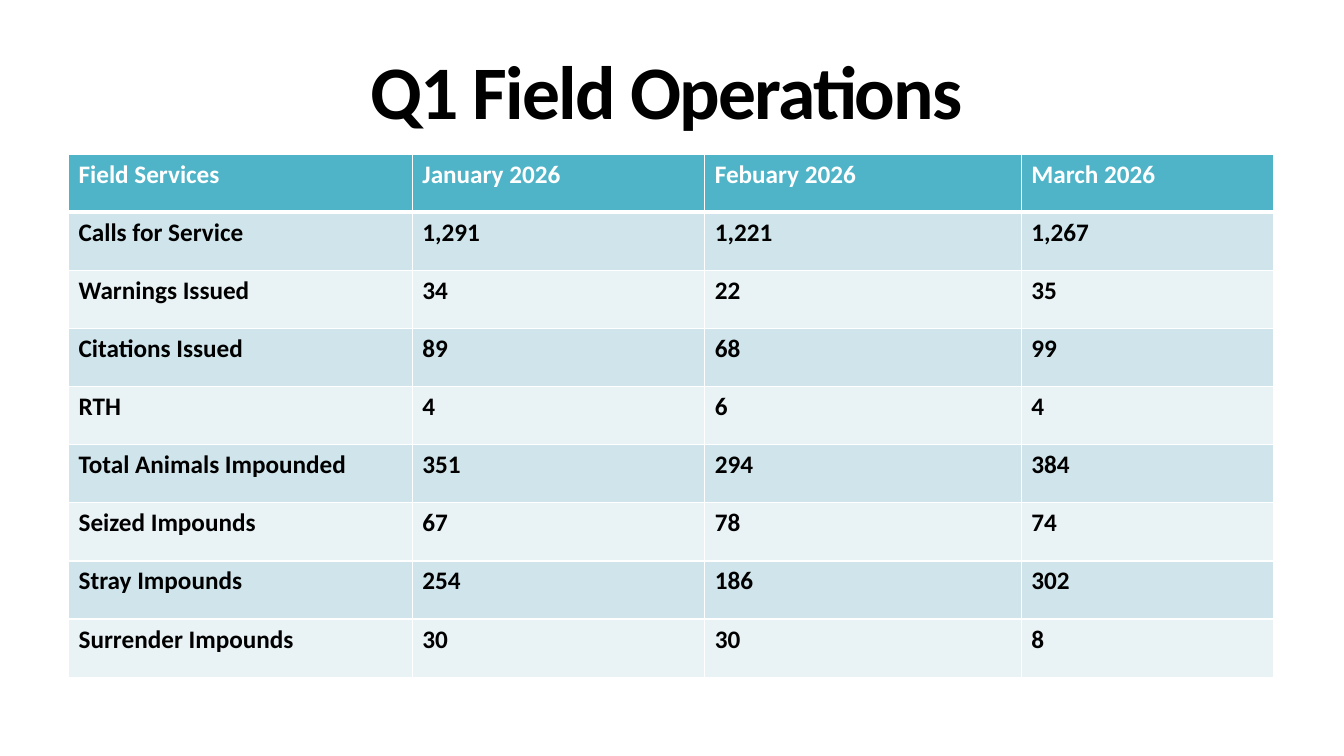
"""Build the Q1 Field Operations slide with its monthly table."""
from lxml import etree
from pptx import Presentation
from pptx.dml.color import RGBColor
from pptx.enum import text
from pptx.oxml import ns
from pptx.util import Inches, Pt

BLACK = RGBColor(0, 0, 0)
WHITE = RGBColor(255, 255, 255)
TEAL = RGBColor(0x50, 0xB4, 0xC8)
MIST = RGBColor(0xD0, 0xE5, 0xEB)
PALE = RGBColor(0xE9, 0xF2, 0xF5)

ROWS = [
    ("Field Services", "January 2026", "Febuary 2026", "March 2026"),
    ("Calls for Service", "1,291", "1,221", "1,267"),
    ("Warnings Issued", "34", "22", "35"),
    ("Citations Issued", "89", "68", "99"),
    ("RTH", "4", "6", "4"),
    ("Total Animals Impounded", "351", "294", "384"),
    ("Seized Impounds", "67", "78", "74"),
    ("Stray Impounds", "254", "186", "302"),
    ("Surrender Impounds", "30", "30", "8"),
]
WIDTHS = [3.41, 2.9, 3.14, 2.5]
HEIGHT = 5.19


def write(para, words, size, color):
    run = para.add_run()
    run.text = words
    run.font.name = "Calibri"
    run.font.size = Pt(size)
    run.font.bold = True
    run.font.color.rgb = color
    return run


def edge(cell, side, points):
    line = etree.SubElement(cell._tc.get_or_add_tcPr(), ns.qn("a:ln" + side), w=str(Pt(points)))
    fill = etree.SubElement(line, ns.qn("a:solidFill"))
    etree.SubElement(fill, ns.qn("a:srgbClr"), val=str(WHITE))


deck = Presentation()
deck.slide_width = Inches(13.33)
deck.slide_height = Inches(7.5)
slide = deck.slides.add_slide(deck.slide_layouts[6])

title = slide.shapes.add_textbox(Inches(0.72), Inches(0), Inches(11.78), Inches(1.91))
frame = title.text_frame
frame.word_wrap = True
frame.vertical_anchor = text.MSO_ANCHOR.MIDDLE
para = frame.paragraphs[0]
para.alignment = text.PP_ALIGN.CENTER
para.line_spacing = 0.85
head = write(para, "Q1 Field Operations", 54, BLACK)
head.font._element.set("spc", "-120")

table = slide.shapes.add_table(
    len(ROWS), len(WIDTHS), Inches(0.68), Inches(1.53), Inches(sum(WIDTHS)), Inches(HEIGHT)
).table
for col, width in zip(table.columns, WIDTHS):
    col.width = Inches(width)

for r, row in enumerate(ROWS):
    table.rows[r].height = Inches(HEIGHT / len(ROWS))
    shade = TEAL if r == 0 else MIST if r % 2 else PALE
    for c, words in enumerate(row):
        cell = table.cell(r, c)
        edge(cell, "L", 1)
        edge(cell, "R", 1)
        edge(cell, "T", 3 if r == 1 else 1)
        edge(cell, "B", 3 if r == 0 else 1)
        cell.fill.solid()
        cell.fill.fore_color.rgb = shade
        write(cell.text_frame.paragraphs[0], words, 18, BLACK if r else WHITE)

deck.save("out.pptx")
